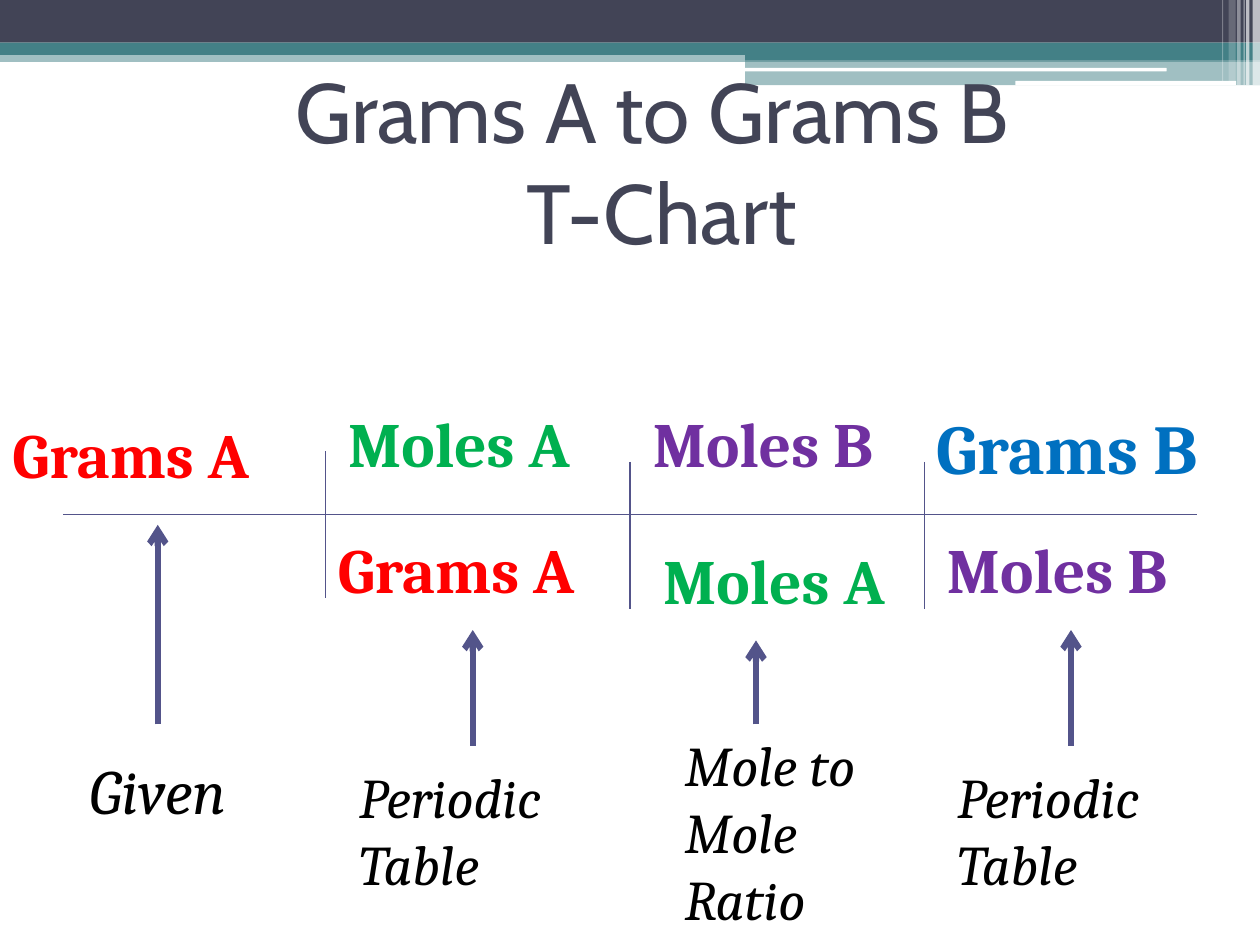
from dataclasses import dataclass

from lxml import etree
from pptx import Presentation
from pptx import util as u
from pptx.dml.color import RGBColor
from pptx.enum import shapes, text
from pptx.oxml import ns


@dataclass(frozen=True)
class Theme:
    dark: str = "424456"
    teal: str = "438086"
    white: str = "FFFFFF"
    line: str = "53548A"
    red: str = "FF0000"
    green: str = "00B050"
    purple: str = "7030A0"
    blue: str = "0070C0"
    black: str = "000000"
    head: str = "Cabin"
    body: str = "Cambria"
    title: int = 48
    large: int = 40
    term: int = 36
    note: int = 32
    thin: float = 0.75
    thick: float = 3.5


T = Theme()
RECT = shapes.MSO_SHAPE.RECTANGLE
ROUND = shapes.MSO_SHAPE.ROUNDED_RECTANGLE

# left, top, width, height in cm; colour; opacity in percent; shape
BANDS = [
    (0, 1.02, 25.4, 0.23, T.teal, 50, RECT),
    (0, 0, 25.4, 0.86, T.dark, 100, RECT),
    (0, 0.86, 25.4, 0.25, T.teal, 100, RECT),
    (15.02, 0.99, 10.38, 0.23, T.teal, 100, RECT),
    (15.02, 1.22, 10.38, 0.5, T.teal, 50, RECT),
    (15.01, 1.37, 8.51, 0.07, T.white, 100, ROUND),
    (20.47, 1.63, 4.45, 0.09, T.white, 100, ROUND),
]

# left, width, height in cm; opacity of the white stripe
STRIPES = [
    (25.25, 0.15, 1.72, 65),
    (25.12, 0.07, 1.72, 65),
    (25.07, 0.02, 1.72, 60),
    (24.94, 0.07, 1.72, 40),
    (24.77, 0.14, 1.63, 20),
    (24.64, 0.02, 1.63, 30),
]

# text, left, top, width in cm; colour; size
TERMS = [
    ("Grams A", 0, 8.26, 7.62, T.red, T.term),
    ("Grams A", 6.56, 10.58, 6.56, T.red, T.term),
    ("Moles A", 6.77, 8.04, 6.77, T.green, T.term),
    ("Moles A", 13.12, 10.8, 6.14, T.green, T.term),
    ("Moles B", 12.91, 8.04, 6.56, T.purple, T.term),
    ("Moles B", 18.84, 10.58, 6.56, T.purple, T.term),
    ("Grams B", 18.63, 8.04, 7.41, T.blue, T.large),
]

# text, left, top, width, height in cm; size; alignment
NOTES = [
    ("Given", 0.85, 15.03, 4.66, 1.8, T.term, "CENTER"),
    ("Periodic Table", 6.99, 15.24, 5.5, 1.62, T.note, "LEFT"),
    ("Mole to Mole Ratio", 13.55, 14.6, 5.08, 3, T.note, "LEFT"),
    ("Periodic Table", 19.05, 15.24, 5.5, 1.62, T.note, "LEFT"),
]

# x, top, bottom in cm
BARS = [(6.56, 9.1, 12.06), (12.7, 9.31, 12.28), (18.63, 9.31, 12.28)]
ARROWS = [(3.18, 10.58, 14.6), (9.53, 12.7, 15.03),
          (15.24, 12.91, 14.6), (21.59, 12.7, 15.03)]


def write(frame, words, size, color, font=T.body, bold=False, italic=False,
          align="LEFT"):
    frame.word_wrap = True
    frame.text = words
    para = frame.paragraphs[0]
    para.alignment = getattr(text.PP_ALIGN, align)
    for run in para.runs:
        face = run.font
        face.name, face.size = font, u.Pt(size)
        face.bold, face.italic = bold, italic
        face.color.rgb = RGBColor.from_string(color)


def label(slide, words, left, top, wide, high, **style):
    box = slide.shapes.add_textbox(*map(u.Cm, (left, top, wide, high)))
    write(box.text_frame, words, **style)
    box.text_frame.auto_size = text.MSO_AUTO_SIZE.SHAPE_TO_FIT_TEXT


def band(slide, left, top, wide, high, color, alpha=100, kind=RECT):
    shape = slide.shapes.add_shape(kind, *map(u.Cm, (left, top, wide, high)))
    shape.shadow.inherit = False
    shape.line.fill.background()
    shape.fill.solid()
    shape.fill.fore_color.rgb = RGBColor.from_string(color)
    if alpha < 100:
        tone = shape.fill._xPr.find(".//" + ns.qn("a:srgbClr"))
        etree.SubElement(tone, ns.qn("a:alpha"), val=str(alpha * 1000))


def rule(slide, x1, y1, x2, y2, width=T.thin, arrow=False):
    line = slide.shapes.add_connector(
        shapes.MSO_CONNECTOR.STRAIGHT, *map(u.Cm, (x1, y1, x2, y2)))
    line.line.width = u.Pt(width)
    line.line.color.rgb = RGBColor.from_string(T.line)
    if arrow:
        etree.SubElement(line.line._get_or_add_ln(), ns.qn("a:tailEnd"),
                         type="arrow")
    etree.SubElement(line._element.spPr, ns.qn("a:effectLst"))


def heading(slide, words):
    """Fill the title and bring it in front of the bands."""
    title = slide.shapes.title
    title.left, title.top = u.Cm(2.54), u.Cm(0.76)
    title.width, title.height = u.Cm(21.59), u.Cm(4.95)
    frame = title.text_frame
    write(frame, words, T.title, T.dark, font=T.head, align="CENTER")
    frame.auto_size = text.MSO_AUTO_SIZE.NONE
    frame.vertical_anchor = text.MSO_ANCHOR.MIDDLE
    slide.shapes._spTree.append(title._element)


def main():
    deck = Presentation()
    deck.slide_width, deck.slide_height = u.Cm(25.4), u.Cm(19.05)
    slide = deck.slides.add_slide(deck.slide_layouts[5])

    for item in BANDS:
        band(slide, *item)
    for left, wide, high, alpha in STRIPES:
        band(slide, left, 0, wide, high, T.white, alpha)
    heading(slide, "Grams A to Grams B \vT-Chart")

    rule(slide, 1.27, 10.37, 24.13, 10.37)
    for x, top, base in BARS:
        rule(slide, x, top, x, base)
    for words, left, top, wide, color, size in TERMS:
        high = 1.96 if size == T.large else 1.8
        label(slide, words, left, top, wide, high, size=size, color=color,
              bold=True)
    for words, left, top, wide, high, size, align in NOTES:
        label(slide, words, left, top, wide, high, size=size, color=T.black,
              italic=True, align=align)
    for x, top, base in ARROWS:
        rule(slide, x, base, x, top, width=T.thick, arrow=True)

    deck.save("out.pptx")


if __name__ == "__main__":
    main()
